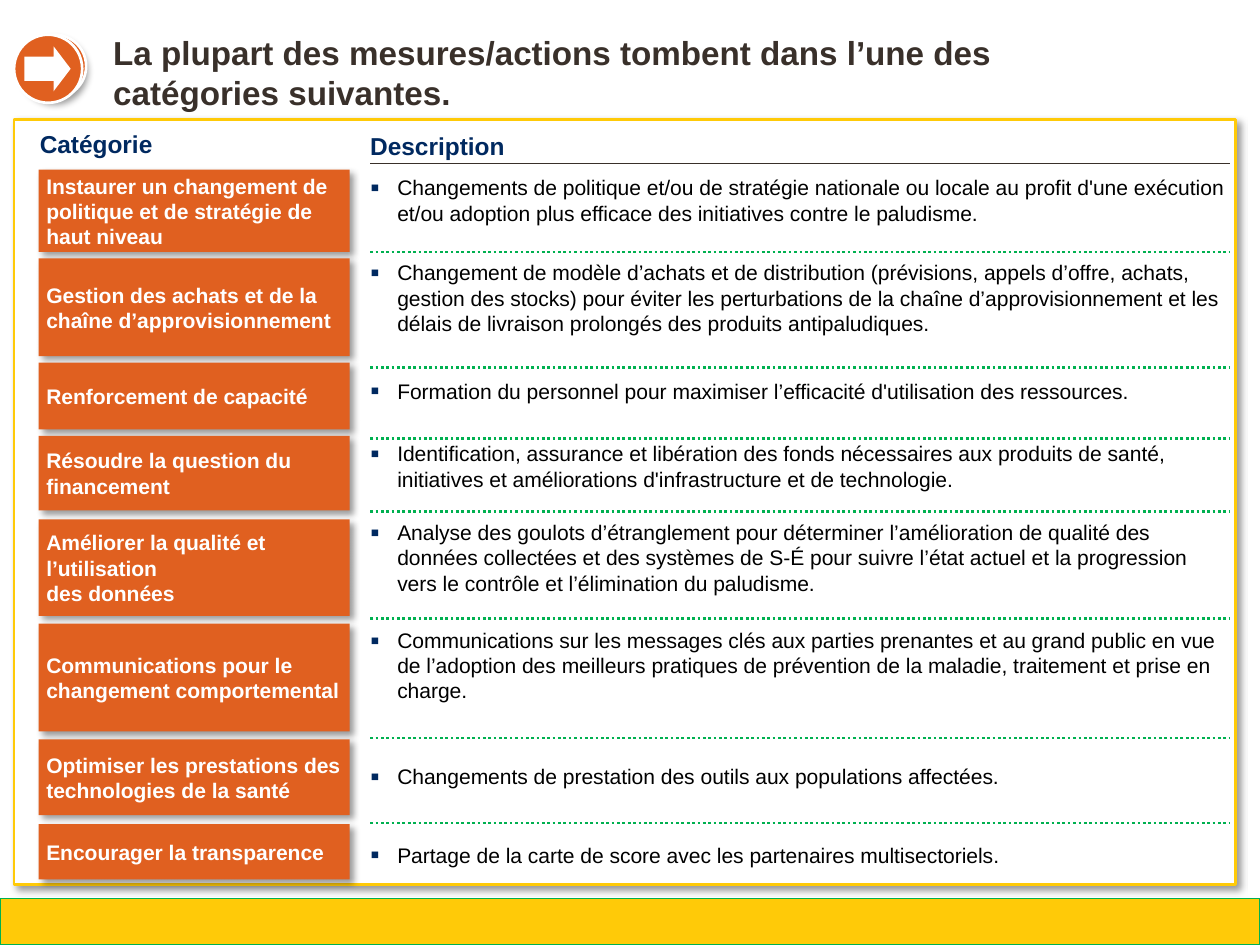
from lxml.etree import SubElement
from pptx import Presentation
from pptx.dml.color import RGBColor
from pptx.enum.dml import MSO_LINE
from pptx.enum.shapes import MSO_CONNECTOR, MSO_SHAPE
from pptx.enum.text import MSO_ANCHOR, PP_ALIGN
from pptx.oxml.ns import qn
from pptx.util import Inches, Pt

WIDE, HIGH = 9.8, 7.35
LEFT, TAG = 0.3, 2.42
RIGHT, SPAN = 2.88, 6.69
INDENT = 0.21
GOLD, GREEN, ORANGE = "FFCA08", "00B050", "E06020"
NAVY, BROWN, WHITE, BLACK = "002960", "39302A", "FFFFFF", "000000"

# tag top, tag height, text top, text height, rule below, tag, text
ROWS = [
    (1.32, 0.64, 1.36, 0.4, 1.96,
     "Instaurer un changement de politique et de stratégie de haut niveau",
     "Changements de politique et/ou de stratégie nationale ou locale au profit d'une exécution "
     "et/ou adoption plus efficace des initiatives contre le paludisme."),
    (2.01, 0.76, 2.02, 0.59, 2.86,
     "Gestion des achats et de la\vchaîne d’approvisionnement",
     "Changement de modèle d’achats et de distribution (prévisions, appels d’offre, achats, "
     "gestion des stocks) pour éviter les perturbations de la chaîne d’approvisionnement et les "
     "délais de livraison prolongés des produits antipaludiques."),
    (2.82, 0.52, 2.94, 0.2, 3.41,
     "Renforcement de capacité",
     "Formation du personnel pour maximiser l’efficacité d'utilisation des ressources."),
    (3.39, 0.58, 3.43, 0.4, 3.98,
     "Résoudre la question du financement",
     "Identification, assurance et libération des fonds nécessaires aux produits de santé, "
     "initiatives et améliorations d'infrastructure et de technologie."),
    (4.04, 0.75, 4.04, 0.59, 4.81,
     "Améliorer la qualité et l’utilisation\vdes données",
     "Analyse des goulots d’étranglement pour déterminer l’amélioration de qualité des "
     "données collectées et des systèmes de S-É pour suivre l’état actuel et la progression "
     "vers le contrôle et l’élimination du paludisme."),
    (4.85, 0.84, 4.88, 0.59, 5.74,
     "Communications pour le changement comportemental",
     "Communications sur les messages clés aux parties prenantes et au grand public en vue "
     "de l’adoption des meilleurs pratiques de prévention de la maladie, traitement et prise en "
     "charge."),
    (5.75, 0.59, 5.94, 0.2, 6.4,
     "Optimiser les prestations des technologies de la santé",
     "Changements de prestation des outils aux populations affectées."),
    (6.41, 0.43, 6.55, 0.2, None,
     "Encourager la transparence",
     "Partage de la carte de score avec les partenaires multisectoriels."),
]

deck = Presentation()
deck.slide_width, deck.slide_height = Inches(WIDE), Inches(HIGH)
slide = deck.slides.add_slide(deck.slide_layouts[6])
shapes = slide.shapes


def draw(kind, at, fill, line=None, width=1.5, shade=None):
    """Add a filled preset shape; shade is the angle of its shadow in degrees."""
    shape = shapes.add_shape(kind, *map(Inches, at))
    shape.shadow.inherit = False
    shape.fill.solid()
    shape.fill.fore_color.rgb = RGBColor.from_string(fill)
    if line:
        shape.line.color.rgb = RGBColor.from_string(line)
        shape.line.width = Pt(width)
    else:
        shape.line.fill.background()
    if shade is not None:
        effects = shape._element.spPr.find(qn("a:effectLst"))
        outer = SubElement(effects, qn("a:outerShdw"), blurRad=str(Pt(4)), dist=str(Pt(3)),
                           dir=str(shade * 60000), algn="tl", rotWithShape="0")
        tint = SubElement(outer, qn("a:srgbClr"), val=BLACK)
        SubElement(tint, qn("a:alpha"), val="40000")
    return shape


def write(shape, text, size, color, bold=True, inset=0, anchor=MSO_ANCHOR.TOP):
    """Fill a shape with one left-aligned paragraph and return it."""
    frame = shape.text_frame
    frame.word_wrap = True
    frame.vertical_anchor = anchor
    frame.margin_left = frame.margin_right = Inches(inset)
    frame.margin_top = frame.margin_bottom = Inches(inset)
    frame.text = text
    para = frame.paragraphs[0]
    para.alignment = PP_ALIGN.LEFT
    for run in para.runs:
        run.font.name, run.font.size, run.font.bold = "Arial", Pt(size), bold
        run.font.color.rgb = RGBColor.from_string(color)
    return para


# Footer, title and panel
draw(MSO_SHAPE.RECTANGLE, (0, 6.99, WIDE, HIGH - 6.99), GOLD, GREEN, 0.75)
title = shapes.add_textbox(*map(Inches, (0.13, 0.25, 7.65, 0.63)))
write(title, "La plupart des mesures/actions tombent dans l’une des catégories suivantes.",
      18.6, BROWN)
title.text_frame.margin_left = Inches(0.75)
draw(MSO_SHAPE.RECTANGLE, (0.11, 0.93, 9.5, 5.95), WHITE, GOLD, shade=45)

# Column heads
for x, y, width, head in [(0.31, 1, 2.56, "Catégorie"), (RIGHT, 1.02, 3.56, "Description")]:
    box = shapes.add_textbox(*map(Inches, (x, y, width, 0.23)))
    write(box, head, 13.7, NAVY, anchor=MSO_ANCHOR.BOTTOM)

# Tags and bulleted texts
for top, tall, y, height, _, tag, text in ROWS:
    card = draw(MSO_SHAPE.RECTANGLE, (LEFT, top, TAG, tall), ORANGE, shade=45)
    write(card, tag, 11.8, WHITE, inset=0.06, anchor=MSO_ANCHOR.MIDDLE)
    box = shapes.add_textbox(*map(Inches, (RIGHT, y, SPAN, height)))
    props = write(box, text, 11.8, BLACK, bold=False)._p.get_or_add_pPr()
    props.set("marL", str(Inches(INDENT)))
    props.set("indent", str(-Inches(INDENT)))
    SubElement(SubElement(props, qn("a:buClr")), qn("a:srgbClr"), val=NAVY)
    SubElement(props, qn("a:buSzPct"), val="125000")
    SubElement(props, qn("a:buFont"), typeface="Arial")
    SubElement(props, qn("a:buChar"), char="▪")

# Rules: a solid one under the head, dotted ones between rows
rules = [1.27] + [row[4] for row in ROWS[:-1]]
for index, y in enumerate(rules):
    rule = shapes.add_connector(MSO_CONNECTOR.STRAIGHT, Inches(RIGHT), Inches(y),
                                Inches(RIGHT + SPAN), Inches(y))
    rule.line.color.rgb = RGBColor.from_string(GREEN if index else BROWN)
    rule.line.width = Pt(1.5 if index else 0.75)
    if index:
        rule.line.dash_style = MSO_LINE.ROUND_DOT
    SubElement(rule._element.spPr, qn("a:effectLst"))

# Arrow badge
draw(MSO_SHAPE.OVAL, (0.18, 0.27, 0.49, 0.49), ORANGE, WHITE, shade=90)
draw(MSO_SHAPE.OVAL, (0.11, 0.27, 0.53, 0.53), ORANGE, WHITE)
arrow = draw(MSO_SHAPE.RIGHT_ARROW, (0.19, 0.36, 0.36, 0.35), WHITE)
arrow.adjustments[0], arrow.adjustments[1] = 0.54, 0.38

deck.save("out.pptx")
